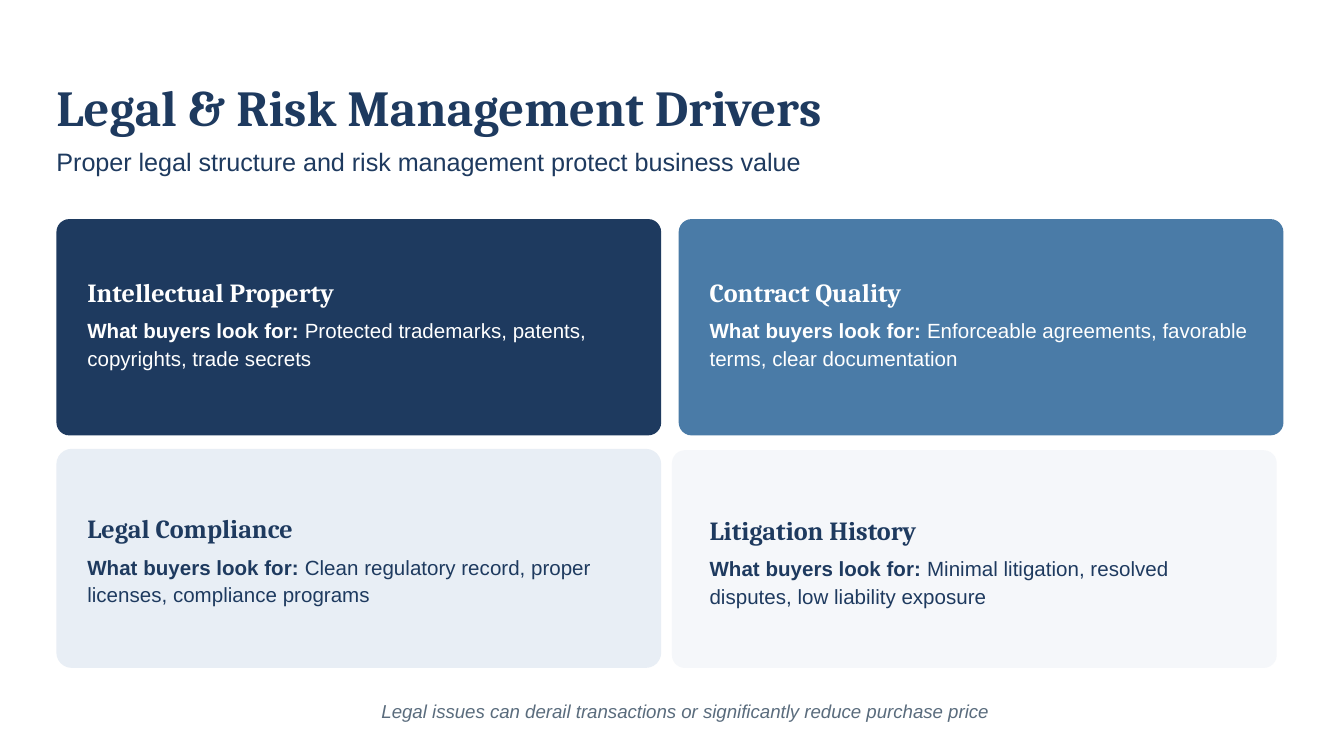
from dataclasses import dataclass
from typing import NamedTuple

import pptx
import pptx.dml.color
import pptx.enum.shapes
import pptx.enum.text
import pptx.util

SLIDE_WIDTH = pptx.util.Inches(10)
SLIDE_HEIGHT = SLIDE_WIDTH * 9 // 16
COLUMN = SLIDE_WIDTH / 100
ROW = SLIDE_HEIGHT / 56.25


@dataclass(frozen=True)
class Theme:
    """Colours, fonts and type sizes of the deck."""
    navy: str = "1E3A5F"
    steel: str = "4A7BA7"
    ice: str = "E8EEF5"
    mist: str = "F5F7FA"
    white: str = "FFFFFF"
    slate: str = "5A6C7D"
    serif: str = "Cambria"
    sans: str = "Arial"
    title: float = 27
    subtitle: float = 13.5
    heading: float = 14
    body: float = 11
    note: float = 10


THEME = Theme()


class Box(NamedTuple):
    """An area in grid columns and rows."""
    column: float
    row: float
    columns: float
    rows: float

    def inner(self, column, row, columns, rows):
        """Return an area measured from this one's top left corner."""
        return Box(self.column + column, self.row + row, columns, rows)

    def emu(self):
        """Return left, top, width and height in slide units."""
        return (round(self.column * COLUMN), round(self.row * ROW),
                round(self.columns * COLUMN), round(self.rows * ROW))


class Driver(NamedTuple):
    """The content and styling of one card."""
    heading: str
    sought: str
    box: Box
    inset: tuple
    fill: str
    ink: str
    corner: float = 0.06


DRIVERS = [
    Driver("Intellectual Property", "Protected trademarks, patents, copyrights, trade secrets",
           Box(4.2, 16.3, 45, 16.1), (2.3, 4.7), THEME.navy, THEME.white),
    Driver("Legal Compliance", "Clean regulatory record, proper licenses, compliance programs",
           Box(4.2, 33.4, 45, 16.3), (2.3, 5.2), THEME.ice, THEME.navy, 0.07),
    Driver("Contract Quality", "Enforceable agreements, favorable terms, clear documentation",
           Box(50.5, 16.3, 45, 16.1), (2.3, 4.7), THEME.steel, THEME.white),
    Driver("Litigation History", "Minimal litigation, resolved disputes, low liability exposure",
           Box(50, 33.5, 45, 16.2), (2.8, 5.2), THEME.mist, THEME.navy),
]


def rgb(code):
    """Turn a hex code into a colour."""
    return pptx.dml.color.RGBColor.from_string(code)


def add_line(slide, box, runs, font, size, color, leading, centered=False):
    """Place one paragraph of (text, bold, italic) runs."""
    textbox = slide.shapes.add_textbox(*box.emu())
    frame = textbox.text_frame
    frame.word_wrap = True
    frame.margin_left = frame.margin_right = frame.margin_top = frame.margin_bottom = 0
    paragraph = frame.paragraphs[0]
    paragraph.line_spacing = pptx.util.Pt(leading)
    if centered:
        paragraph.alignment = pptx.enum.text.PP_ALIGN.CENTER
    for text, bold, italic in runs:
        run = paragraph.add_run()
        run.text = text
        run.font.name = font
        run.font.size = pptx.util.Pt(size)
        run.font.bold = bold
        run.font.italic = italic
        run.font.color.rgb = rgb(color)


def add_header(slide, box):
    """Place the title and subtitle."""
    add_line(slide, box.inner(0, 0, 74.6, 4.2),
             [("Legal & Risk Management Drivers", True, False)],
             THEME.serif, THEME.title, THEME.navy, 30)
    add_line(slide, box.inner(0, 4.2, box.columns, 2.9),
             [("Proper legal structure and risk management protect business value", False, False)],
             THEME.sans, THEME.subtitle, THEME.navy, 21)


def add_card(slide, box, driver):
    """Place one rounded card with its heading and description."""
    card = slide.shapes.add_shape(
        pptx.enum.shapes.MSO_SHAPE.ROUNDED_RECTANGLE, *box.emu())
    card.adjustments[0] = driver.corner
    card.shadow.inherit = False
    card.fill.solid()
    card.fill.fore_color.rgb = rgb(driver.fill)
    card.line.fill.background()
    content = box.inner(*driver.inset, 40.3, 6.6)
    add_line(slide, content.inner(0, 0, content.columns, 1.9),
             [(driver.heading, True, False)],
             THEME.serif, THEME.heading, driver.ink, 13.5)
    add_line(slide, content.inner(0, 2.5, content.columns, 4.1),
             [("What buyers look for:", True, False), (f" {driver.sought}", False, False)],
             THEME.sans, THEME.body, driver.ink, 14.6)


def add_footer(slide, box):
    """Place the closing remark."""
    add_line(slide, box,
             [("Legal issues can derail transactions or significantly reduce purchase price",
               False, True)],
             THEME.sans, THEME.note, THEME.slate, 14, centered=True)


def main():
    """Build and save the slide."""
    deck = pptx.Presentation()
    deck.slide_width, deck.slide_height = SLIDE_WIDTH, SLIDE_HEIGHT
    slide = deck.slides.add_slide(deck.slide_layouts[6])
    slide.background.fill.solid()
    slide.background.fill.fore_color.rgb = rgb(THEME.white)
    add_header(slide, Box(4.2, 6, 93.5, 7.1))
    for driver in DRIVERS:
        add_card(slide, driver.box, driver)
    add_footer(slide, Box(4.2, 51.8, 93.5, 1.9))
    deck.save("out.pptx")


if __name__ == "__main__":
    main()
